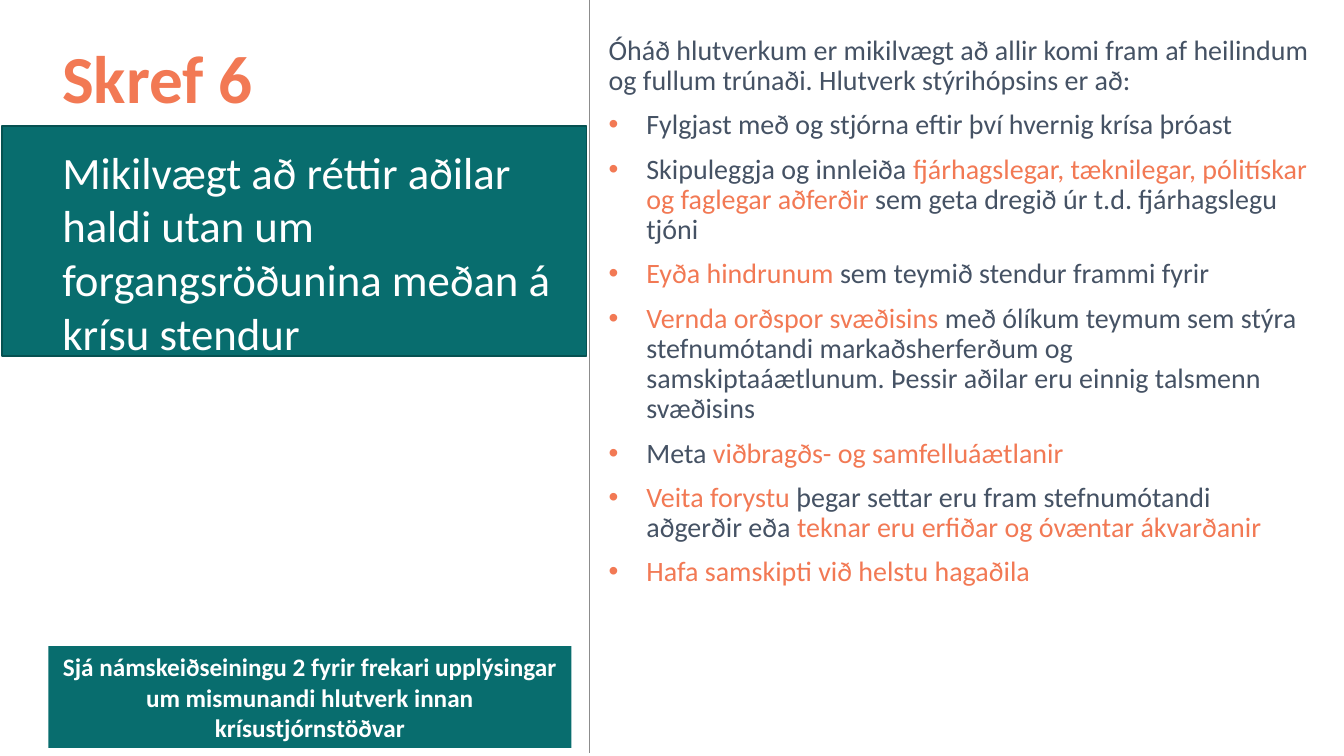
import pptx
import pptx.dml.color
import pptx.enum.shapes
import pptx.enum.text
import pptx.oxml.ns
import pptx.util
from lxml import etree

Cm = pptx.util.Cm
Pt = pptx.util.Pt
RGBColor = pptx.dml.color.RGBColor
ALIGN = pptx.enum.text.PP_ALIGN
ANCHOR = pptx.enum.text.MSO_ANCHOR
qn = pptx.oxml.ns.qn

ORANGE = RGBColor(0xF2, 0x79, 0x54)
TEAL = RGBColor(0x08, 0x6D, 0x6E)
DARK_TEAL = RGBColor(0x06, 0x51, 0x51)
SLATE = RGBColor(0x45, 0x52, 0x64)
GREY = RGBColor(0x8C, 0x8C, 0x8C)
WHITE = RGBColor(0xFF, 0xFF, 0xFF)

INTRO = ("Óháð hlutverkum er mikilvægt að allir komi fram af heilindum og fullum "
         "trúnaði. Hlutverk stýrihópsins er að:")
# Asterisks enclose the words set in the accent colour.
DUTIES = [
    "Fylgjast með og stjórna eftir því hvernig krísa þróast",
    "Skipuleggja og innleiða *fjárhagslegar, tæknilegar, pólitískar og faglegar "
    "aðferðir *sem geta dregið úr t.d. fjárhagslegu tjóni",
    "*Eyða hindrunum *sem teymið stendur frammi fyrir",
    "*Vernda orðspor svæðisins *með ólíkum teymum sem stýra stefnumótandi "
    "markaðsherferðum og samskiptaáætlunum. Þessir aðilar eru einnig talsmenn svæðisins",
    "Meta *viðbragðs- og samfelluáætlanir*",
    "*Veita forystu* þegar settar eru fram stefnumótandi aðgerðir eða "
    "*teknar eru erfiðar og óvæntar ákvarðanir*",
    "*Hafa samskipti við helstu hagaðila*",
]


def add_bullet(paragraph, color, indent):
    properties = paragraph._p.get_or_add_pPr()
    properties.set("marL", str(indent))
    properties.set("indent", str(-indent))
    bullet_color = etree.SubElement(properties, qn("a:buClr"))
    etree.SubElement(bullet_color, qn("a:srgbClr"), val=str(color))
    etree.SubElement(properties, qn("a:buFont"), typeface="Arial")
    etree.SubElement(properties, qn("a:buChar"), char="•")


def write(frame, text, size, color, accent=ORANGE, bold=False, align=ALIGN.LEFT,
          spacing=1.0, before=0, bullet=False):
    """Add a paragraph to the frame, using its empty first one if there is one."""
    first = frame.paragraphs[0]
    paragraph = frame.add_paragraph() if first.runs else first
    if bullet:
        add_bullet(paragraph, ORANGE, Cm(0.95))
    paragraph.alignment = align
    paragraph.line_spacing = spacing
    if before:
        paragraph.space_before = Pt(before)
    for position, part in enumerate(text.split("*")):
        if part:
            run = paragraph.add_run()
            run.text = part
            run.font.name = "Calibri"
            run.font.size = Pt(size)
            run.font.bold = bold
            run.font.color.rgb = accent if position % 2 else color


class StepSlide:
    def __init__(self, presentation):
        self.shapes = presentation.slides.add_slide(presentation.slide_layouts[6]).shapes

    def divider(self, x, top, bottom):
        line = self.shapes.add_connector(pptx.enum.shapes.MSO_CONNECTOR.STRAIGHT,
                                         Cm(x), Cm(top), Cm(x), Cm(bottom))
        line.line.color.rgb = GREY
        line.line.width = Pt(0.75)
        etree.SubElement(line._element.spPr, qn("a:effectLst"))

    def panel(self, left, top, width, height, outline=None):
        shape = self.shapes.add_shape(pptx.enum.shapes.MSO_SHAPE.RECTANGLE,
                                      Cm(left), Cm(top), Cm(width), Cm(height))
        shape.shadow.inherit = False
        shape.fill.solid()
        shape.fill.fore_color.rgb = TEAL
        if outline is None:
            shape.line.fill.background()
        else:
            shape.line.color.rgb = outline
            shape.line.width = Pt(1)
        shape.text_frame.word_wrap = True
        shape.text_frame.vertical_anchor = ANCHOR.MIDDLE
        return shape.text_frame

    def text_area(self, left, top, width, height):
        frame = self.shapes.add_textbox(Cm(left), Cm(top), Cm(width), Cm(height)).text_frame
        frame.word_wrap = True
        frame.vertical_anchor = ANCHOR.TOP
        return frame


def main():
    presentation = pptx.Presentation()
    presentation.slide_width = Cm(33.87)
    presentation.slide_height = Cm(19.05)
    slide = StepSlide(presentation)

    slide.divider(14.86, 0, 18.97)
    slide.panel(0.05, 3.18, 14.73, 5.79, outline=DARK_TEAL)

    duties = slide.text_area(15.09, 0.79, 18.16, 10.34)
    write(duties, INTRO, size=20, color=SLATE, spacing=0.9)
    for duty in DUTIES:
        write(duties, duty, size=20, color=SLATE, spacing=0.9, before=10, bullet=True)

    step = slide.text_area(1.32, 0.79, 12.95, 17.02)
    write(step, "Skref 6", size=48, color=ORANGE, bold=True)
    write(step, "Mikilvægt að réttir aðilar haldi utan um forgangsröðunina meðan á "
          "krísu stendur", size=32, color=WHITE, before=19.5)

    reference = slide.panel(1.22, 16.28, 13.18, 2.57)
    write(reference, "Sjá námskeiðseiningu 2 fyrir frekari upplýsingar um mismunandi "
          "hlutverk innan krísustjórnstöðvar", size=18, color=WHITE, bold=True,
          align=ALIGN.CENTER)

    presentation.save("out.pptx")


if __name__ == "__main__":
    main()
